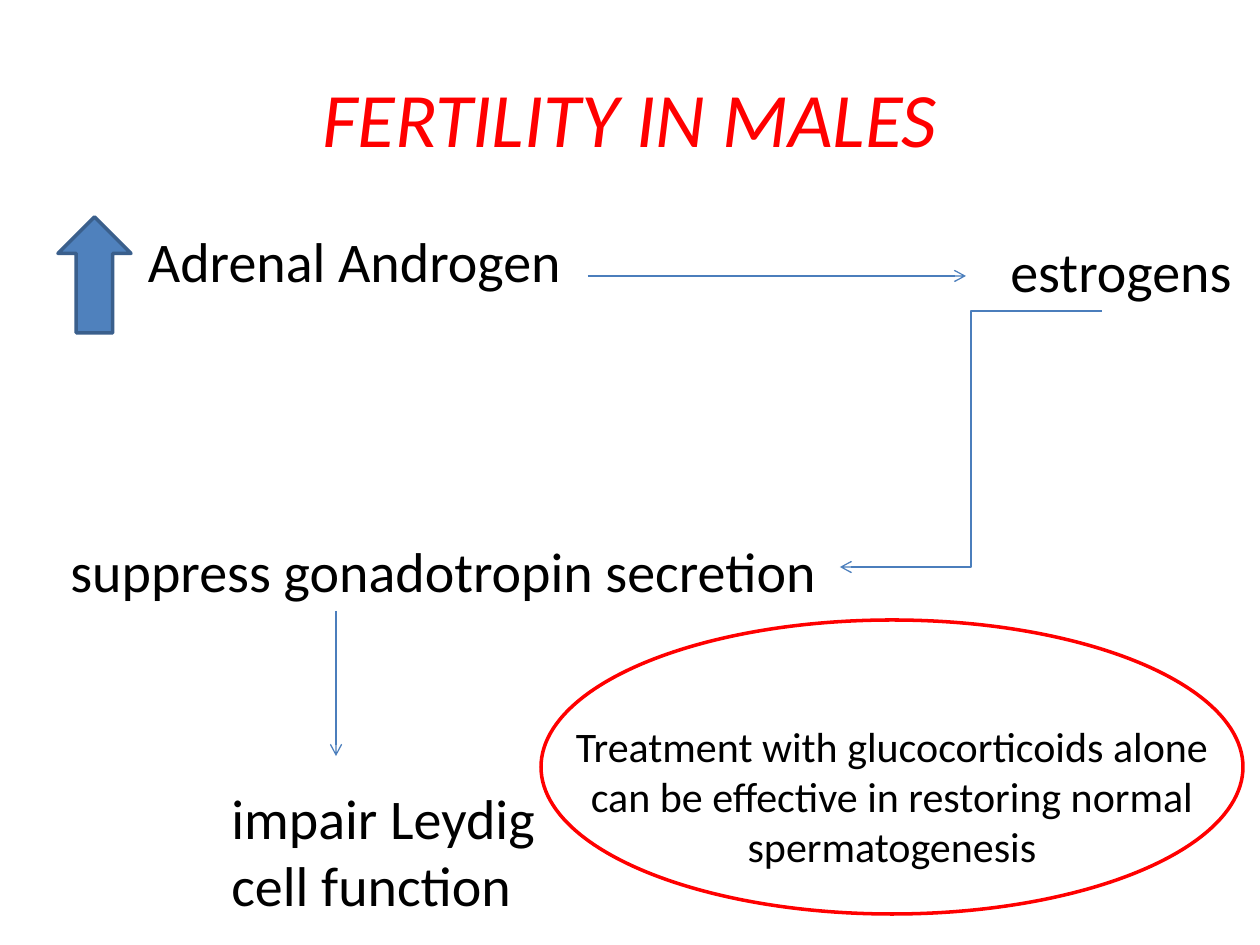
from dataclasses import dataclass

from lxml.etree import SubElement
from pptx import Presentation
from pptx.dml.color import RGBColor
from pptx.enum.shapes import MSO_CONNECTOR, MSO_SHAPE
from pptx.enum.text import MSO_ANCHOR, PP_ALIGN
from pptx.oxml.ns import qn
from pptx.util import Emu, Pt

EMU_PER_PX = 914400 / 126


@dataclass(frozen=True)
class Theme:
    font: str = "Calibri"
    black: RGBColor = RGBColor(0, 0, 0)
    red: RGBColor = RGBColor(255, 0, 0)
    blue: RGBColor = RGBColor(0x4F, 0x81, 0xBD)
    outline: RGBColor = RGBColor(0x3A, 0x5F, 0x8C)
    flow: RGBColor = RGBColor(0x4B, 0x7E, 0xBC)
    title_size: int = 44
    body_size: int = 32
    note_size: int = 24
    outline_width: float = 2
    flow_width: float = 0.75


THEME = Theme()


def px(value):
    return Emu(round(value * EMU_PER_PX))


def add_text(page, box, text, size=THEME.body_size, color=THEME.black,
             align=PP_ALIGN.LEFT, wrap=True, italic=False):
    shape = page.shapes.add_textbox(*map(px, box))
    frame = shape.text_frame
    frame.text = text
    frame.word_wrap = wrap
    for para in frame.paragraphs:
        para.alignment = align
        for span in para.runs:
            span.font.name = THEME.font
            span.font.size = Pt(size)
            span.font.italic = italic
            span.font.color.rgb = color
    return shape


def add_outlined(page, kind, box, line_color, fill_color=None):
    shape = page.shapes.add_shape(kind, *map(px, box))
    shape.shadow.inherit = False
    if fill_color is None:
        shape.fill.background()
    else:
        shape.fill.solid()
        shape.fill.fore_color.rgb = fill_color
    shape.line.color.rgb = line_color
    shape.line.width = Pt(THEME.outline_width)


def add_flow(page, start, end, kind=MSO_CONNECTOR.STRAIGHT):
    connector = page.shapes.add_connector(kind, *map(px, start + end))
    connector.line.color.rgb = THEME.flow
    connector.line.width = Pt(THEME.flow_width)
    properties = connector._element.spPr
    SubElement(properties.find(qn("a:ln")), qn("a:tailEnd"), type="arrow")
    SubElement(properties, qn("a:effectLst"))


def add_title(page, box):
    title = add_text(page, box, "FERTILITY IN MALES", THEME.title_size,
                     THEME.red, PP_ALIGN.CENTER, italic=True)
    title.text_frame.vertical_anchor = MSO_ANCHOR.MIDDLE


def add_pathway(page, box):
    left, top, width, height = box
    add_outlined(page, MSO_SHAPE.UP_ARROW, (left, top, 73, 116),
                 THEME.outline, THEME.blue)
    androgen = add_text(page, (left + 5, top + 3, 1134, height - 3),
                        "Adrenal Androgen")
    androgen.text_frame.margin_left = px(85)
    add_text(page, (left + width - 248, top + 13, 248, 81),
             "estrogens", wrap=False)
    add_text(page, (left, top + 313, 793, 81),
             "suppress gonadotropin secretion", wrap=False)
    add_text(page, (left + 161, top + 560, 630, 149),
             "impair Leydig\ncell function")
    add_flow(page, (left + 530, top + 59), (left + 908, top + 59))
    add_flow(page, (left + 1044, top + 94), (left + 782, top + 350),
             MSO_CONNECTOR.ELBOW)
    add_flow(page, (left + 278, top + 394), (left + 278, top + 539))


def add_treatment(page, box):
    left, top, width, height = box
    add_outlined(page, MSO_SHAPE.OVAL, box, THEME.red)
    add_text(page, (left - 17, top + 94, width + 34, 165),
             "Treatment with glucocorticoids alone\n"
             "can be effective in restoring normal spermatogenesis",
             THEME.note_size, align=PP_ALIGN.CENTER)


def main():
    deck = Presentation()
    deck.slide_width, deck.slide_height = px(1260), px(945)
    page = deck.slides.add_slide(deck.slide_layouts[6])
    add_title(page, (63, 38, 1134, 158))
    add_pathway(page, (58, 217, 1188, 728))
    add_treatment(page, (541, 620, 702, 294))
    deck.save("out.pptx")


if __name__ == "__main__":
    main()
